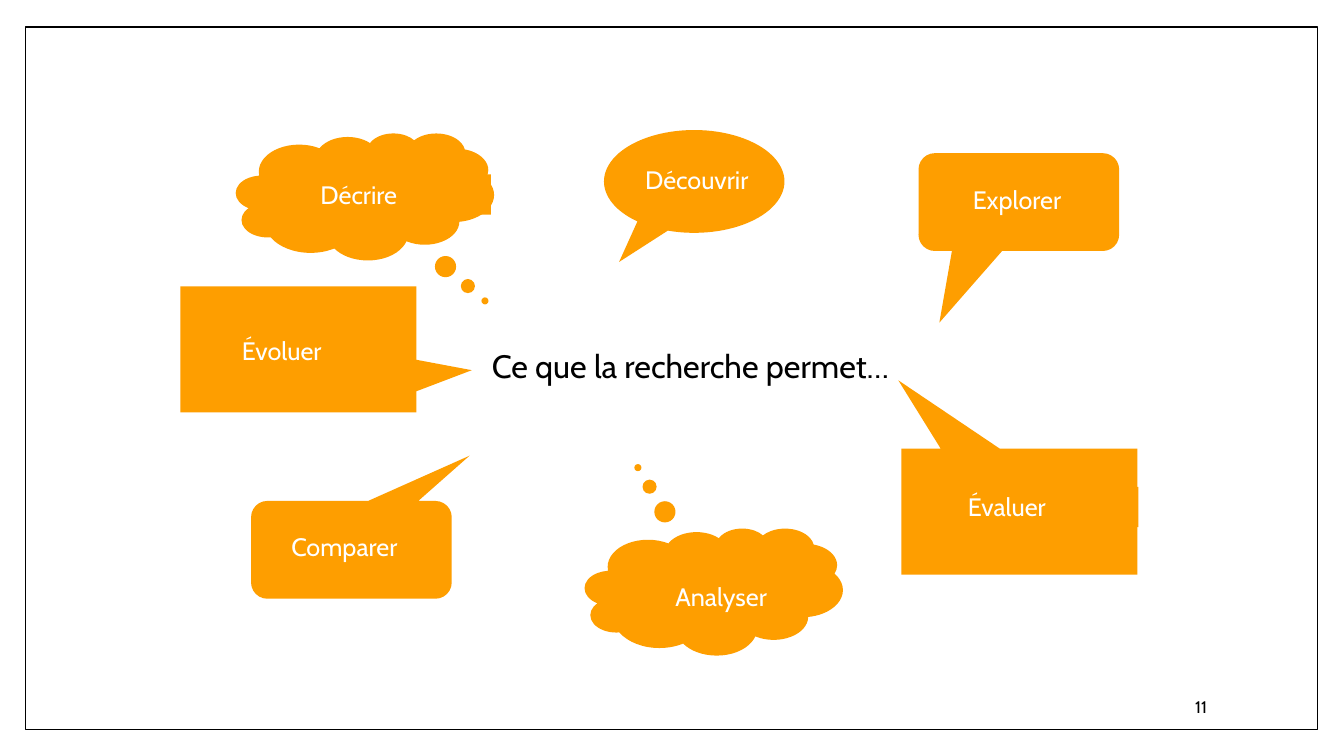
from pptx import Presentation
from pptx.dml.color import RGBColor
from pptx.enum.shapes import MSO_SHAPE
from pptx.enum.text import MSO_ANCHOR, MSO_AUTO_SIZE, PP_ALIGN
from pptx.util import Emu, Pt

PX = 9144  # 100 px to the inch
TITLE_ONLY = 5
FONT = "Cabin"
ORANGE, WHITE, BLACK = "FE9E00", "FFFFFF", "000000"

RECT = MSO_SHAPE.RECTANGLE
OVAL_CALLOUT = MSO_SHAPE.OVAL_CALLOUT
CLOUD_CALLOUT = MSO_SHAPE.CLOUD_CALLOUT
RECT_CALLOUT = MSO_SHAPE.RECTANGULAR_CALLOUT
ROUND_CALLOUT = MSO_SHAPE.ROUNDED_RECTANGULAR_CALLOUT
LEFT, CENTER, RIGHT = PP_ALIGN.LEFT, PP_ALIGN.CENTER, PP_ALIGN.RIGHT
TOP, MIDDLE = MSO_ANCHOR.TOP, MSO_ANCHOR.MIDDLE
NO_AUTOSIZE = MSO_AUTO_SIZE.NONE

# Width and height of each kind of callout
SIZES = {
    OVAL_CALLOUT: (179, 102),
    CLOUD_CALLOUT: (256, 126),
    RECT_CALLOUT: (234, 125),
    ROUND_CALLOUT: (199, 97),
}
LABEL_HEIGHT = 40

# Callout kind, left, top, pointer; label text, left, top, width, alignment
CALLOUTS = [
    (CLOUD_CALLOUT, 234, 132, (0.465, 0.822), "Décrire", 308, 173, 179, LEFT),
    (OVAL_CALLOUT, 599, 129, (-0.416, 0.783), "Découvrir", 630, 158, 129, LEFT),
    (ROUND_CALLOUT, 911, 152, (-0.396, 1.233), "Explorer", 955, 178, 144, LEFT),
    (RECT_CALLOUT, 179, 284, (0.735, 0.166), "Évoluer", 230, 328, 179, LEFT),
    (RECT_CALLOUT, 894, 445, (-0.513, -1.042), "Évaluer", 950, 483, 179, LEFT),
    (ROUND_CALLOUT, 249, 497, (0.589, -0.963), "Comparer", 252, 522, 179, CENTER),
    (CLOUD_CALLOUT, 580, 524, (-0.294, -0.977), "Analyser", 660, 572, 128, LEFT),
]


def color(value):
    return RGBColor.from_string(value)


def lengths(*pixels):
    return [Emu(pixel * PX) for pixel in pixels]


def place(shape, *bounds):
    shape.left, shape.top, shape.width, shape.height = lengths(*bounds)


def write(shape, text, size=18, fill=WHITE, align=LEFT, anchor=TOP, spacing=None):
    frame = shape.text_frame
    frame.word_wrap = True
    frame.auto_size = NO_AUTOSIZE
    frame.vertical_anchor = anchor
    para = frame.paragraphs[0]
    para.alignment = align
    para.line_spacing = spacing
    span = para.add_run()
    span.text = text
    span.font.name = FONT
    span.font.size = Pt(size)
    span.font.color.rgb = color(fill)


def add_block(page, kind, *bounds, fill=ORANGE, line=None):
    block = page.shapes.add_shape(kind, *lengths(*bounds))
    block.shadow.inherit = False
    block.fill.solid()
    block.fill.fore_color.rgb = color(fill)
    if line:
        block.line.color.rgb = color(line)
        block.line.width = Pt(1)
    else:
        block.line.fill.background()
    return block


def add_callout(page, kind, left, top, pointer, text, label_left, label_top, label_width, align):
    bubble = add_block(page, kind, left, top, *SIZES[kind])
    for index, value in enumerate(pointer):
        bubble.adjustments[index] = value
    label = add_block(page, RECT, label_left, label_top, label_width, LABEL_HEIGHT)
    write(label, text, align=align)


def add_title(page, text):
    title = page.shapes.title
    place(title, 476, 345, 418, 44)
    frame = title.text_frame
    frame.margin_left = frame.margin_right = frame.margin_top = frame.margin_bottom = 0
    write(title, text, size=23.1, fill=BLACK, align=CENTER, anchor=MIDDLE, spacing=0.7)
    return title


def main():
    deck = Presentation()
    deck.slide_width, deck.slide_height = lengths(1333, 750)
    page = deck.slides.add_slide(deck.slide_layouts[TITLE_ONLY])

    # Title, with the page frame behind it
    title = add_title(page, "Ce que la recherche permet…")
    border = add_block(page, RECT, 25, 27, 1282, 697, fill=WHITE, line=BLACK)
    title.element.addprevious(border.element)

    # Callouts around the title
    for callout in CALLOUTS:
        add_callout(page, *callout)

    # Page number
    number = page.shapes.add_textbox(*lengths(1020, 681, 187, 40))
    write(number, "11", size=12, fill=BLACK, align=RIGHT, anchor=MIDDLE)

    deck.save("out.pptx")


if __name__ == "__main__":
    main()
